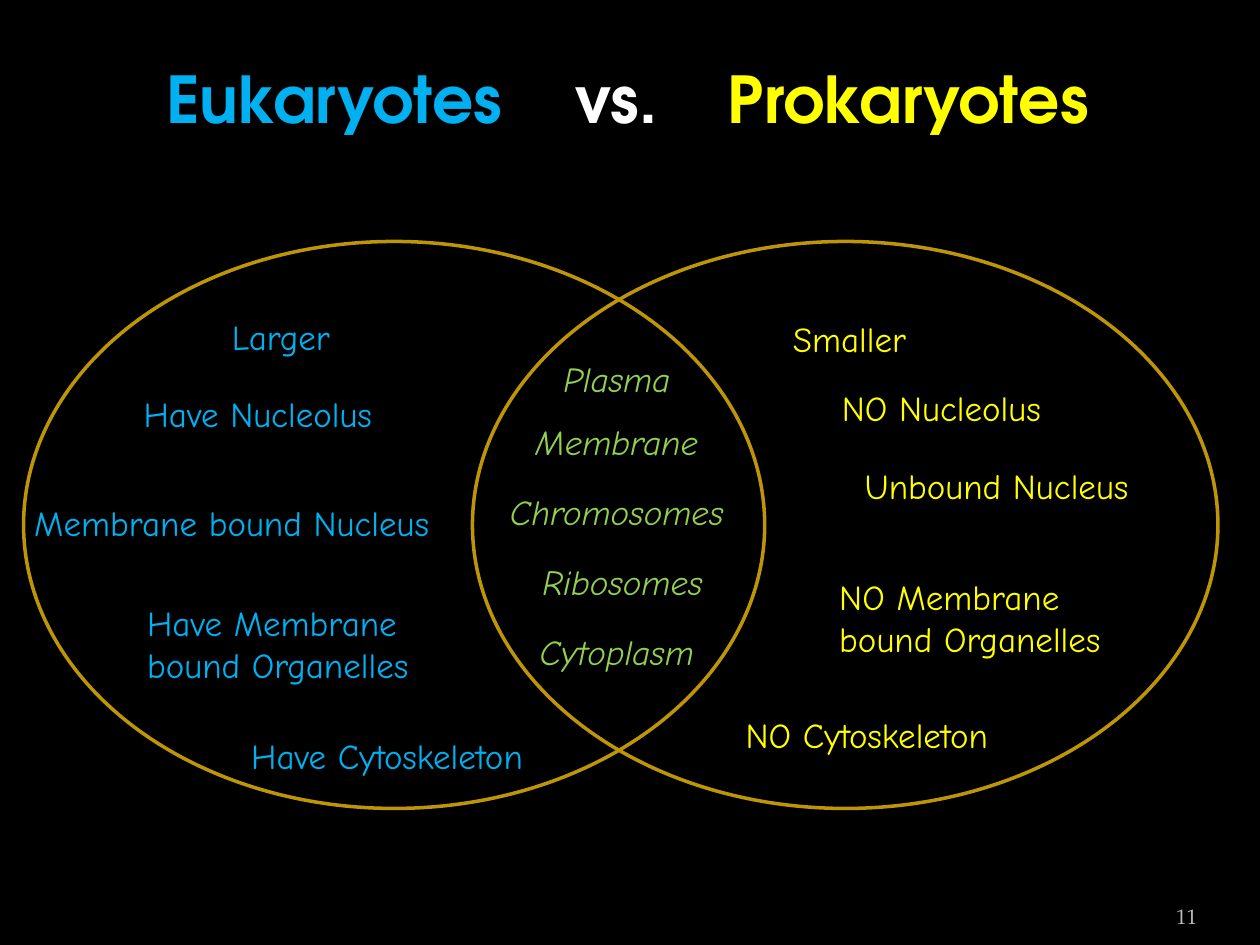
from pptx import Presentation
from pptx.util import Pt
from pptx.dml.color import RGBColor as RGB
from pptx.enum.shapes import MSO_SHAPE as SHAPE
from pptx.enum.text import MSO_ANCHOR as ANCHOR, PP_ALIGN as ALIGN
from pptx.oxml.ns import qn
from lxml.etree import SubElement as Sub

COLORS = {
    "black": "000000",
    "white": "FFFFFF",
    "blue": "00B0F0",
    "yellow": "FFFF00",
    "green": "92D050",
    "gold": "BD9506",
    "gray": "BDBDBD",
}
HEAD = "TeX Gyre Adventor"
BODY = "Comic Neue"
FOOT = "TeX Gyre Pagella"

LABELS = {
    "blue": [
        ("Larger", 114.5, 176.5, 163),
        ("Have Nucleolus", 64, 220.5, 186),
        ("Membrane bound Nucleus", 1.5, 283, 307),
        ("Have Membrane bound Organelles", 66, 340, 198),
        ("Have Cytoskeleton", 125.5, 416, 222),
    ],
    "yellow": [
        ("Smaller", 435, 178, 163),
        ("NO Nucleolus", 463, 217.5, 186),
        ("Unbound Nucleus", 476, 262, 186),
        ("NO Membrane bound Organelles", 461.5, 325.5, 186),
        ("NO Cytoskeleton", 408, 404, 186),
    ],
}
SHARED = ["Plasma Membrane", "Chromosomes", " Ribosomes", "Cytoplasm"]


def color(name):
    return RGB.from_string(COLORS[name])


def style(run, face, size, tint, bold=False, slant=False):
    font = run.font
    font.name, font.size = face, Pt(size)
    font.bold, font.italic = bold, slant
    font.color.rgb = color(tint)


def add_box(slide, left, top, width, height):
    box = slide.shapes.add_textbox(Pt(left), Pt(top), Pt(width), Pt(height))
    frame = box.text_frame
    frame.word_wrap = True
    return frame


def add_title(slide, parts, stops):
    frame = add_box(slide, 36, 30, 648, 90)
    frame.margin_left = Pt(59)
    para = frame.paragraphs[0]
    tabs = Sub(para._p.get_or_add_pPr(), qn("a:tabLst"))
    for stop in stops:
        Sub(tabs, qn("a:tab"), pos=str(Pt(stop)), algn="l")
    for text, tint in parts:
        run = para.add_run()
        run.text = text
        style(run, HEAD, 36.9, tint, bold=True)


def add_oval(slide, left, width):
    oval = slide.shapes.add_shape(
        SHAPE.OVAL, Pt(left), Pt(138), Pt(width), Pt(324))
    oval.shadow.inherit = False
    oval.fill.background()
    oval.line.color.rgb = color("gold")
    oval.line.width = Pt(2)


def add_label(slide, text, left, top, width, tint):
    para = add_box(slide, left, top, width, 42).paragraphs[0]
    para.text = text
    para._p.get_or_add_pPr().set("marL", str(Pt(11)))
    style(para.runs[0], BODY, 20, tint)


def add_shared(slide, items):
    frame = add_box(slide, 265.5, 188.5, 163, 196)
    frame.text = "\n".join(items)
    for i, para in enumerate(frame.paragraphs):
        para._p.get_or_add_pPr().set("marL", str(Pt(11)))
        para.alignment = ALIGN.CENTER
        para.line_spacing = 1.5
        if i:
            para.space_before = Pt(4)
        style(para.runs[0], BODY, 20, "green", slant=True)


def add_number(slide, text):
    frame = add_box(slide, 624, 505.5, 60, 29)
    frame.margin_left = frame.margin_right = 0
    frame.vertical_anchor = ANCHOR.BOTTOM
    para = frame.paragraphs[0]
    para.text = text
    para.alignment = ALIGN.RIGHT
    style(para.runs[0], FOOT, 12, "gray")


def main():
    deck = Presentation()
    deck.slide_width, deck.slide_height = Pt(720), Pt(540)
    slide = deck.slides.add_slide(deck.slide_layouts[6])
    fill = slide.background.fill
    fill.solid()
    fill.fore_color.rgb = color("black")

    add_title(slide, [("Eukaryotes\t", "blue"), ("vs.\t", "white"),
                      ("Prokaryotes", "yellow")], [234, 321])
    add_oval(slide, 13.5, 423.5)
    add_oval(slide, 270, 426)
    for tint, rows in LABELS.items():
        for text, left, top, width in rows:
            add_label(slide, text, left, top, width, tint)
    add_shared(slide, SHARED)
    add_number(slide, "11")
    deck.save("out.pptx")


if __name__ == "__main__":
    main()
